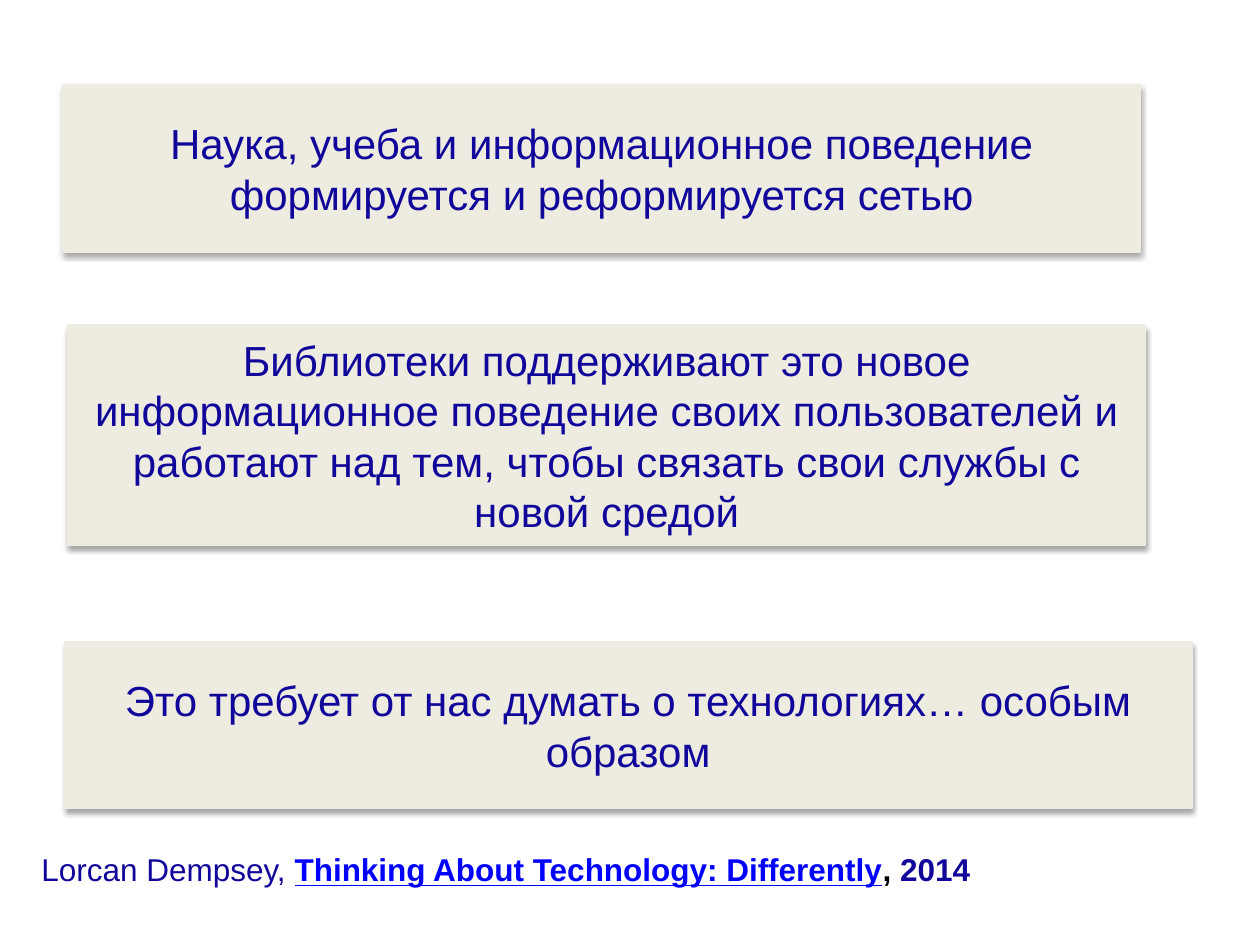
from dataclasses import dataclass

from lxml.etree import SubElement
from pptx import Presentation
from pptx.dml.color import RGBColor
from pptx.enum.shapes import MSO_SHAPE as Preset
from pptx.enum.text import MSO_ANCHOR as Anchor, MSO_AUTO_SIZE as AutoSize, PP_ALIGN as Align
from pptx.oxml.ns import qn
from pptx.util import Inches, Pt


@dataclass(frozen=True)
class Theme:
    font: str = "Arial"
    navy: str = "11069A"
    link: str = "0000FF"
    black: str = "000000"
    cream: str = "EEECE1"
    statement_size: int = 24
    source_size: int = 18


@dataclass(frozen=True)
class Area:
    """A place on the grid, in columns and rows."""
    column: float
    row: float
    columns: float
    rows: float


@dataclass(frozen=True)
class Statement:
    area: Area
    text: str


THEME = Theme()
COLUMNS, ROWS = 100, 75
WIDTH, HEIGHT = Inches(10), Inches(7.5)

STATEMENTS = (
    Statement(Area(5, 6.7, 85.5, 13.3),
              "Наука, учеба и информационное поведение формируется и реформируется сетью"),
    Statement(Area(5.4, 25.8, 85.5, 17.5),
              "Библиотеки поддерживают это новое информационное поведение своих "
              "пользователей и работают над тем, чтобы связать свои службы с новой средой"),
    Statement(Area(5.1, 50.9, 89.5, 13.3),
              "Это требует от нас думать о технологиях… особым образом"),
)
SOURCE_AREA = Area(2.3, 67, 82, 4)


def place(area: Area) -> tuple[int, int, int, int]:
    """Turn grid units into left, top, width and height."""
    column, row = WIDTH / COLUMNS, HEIGHT / ROWS
    return (round(area.column * column), round(area.row * row),
            round(area.columns * column), round(area.rows * row))


def add_text(paragraph, text: str, *, size: int, color: str = THEME.navy,
             bold: bool = False, underline: bool = False) -> None:
    run = paragraph.add_run()
    run.text = text
    font = run.font
    font.name, font.size = THEME.font, Pt(size)
    font.bold, font.underline = bold, underline
    font.color.rgb = RGBColor.from_string(color)


def add_shadow(shape) -> None:
    """Give the shape a soft shadow straight below it."""
    shape.shadow.inherit = False
    effects = shape.element.spPr.find(qn("a:effectLst"))
    shadow = SubElement(effects, qn("a:outerShdw"), blurRad=str(Pt(3.1)),
                        dist=str(Pt(1.8)), dir=str(90 * 60000), rotWithShape="0")
    color = SubElement(shadow, qn("a:srgbClr"), val=THEME.black)
    SubElement(color, qn("a:alpha"), val="35000")


def add_statement(slide, statement: Statement) -> None:
    shape = slide.shapes.add_shape(Preset.RECTANGLE, *place(statement.area))
    cream = RGBColor.from_string(THEME.cream)
    shape.fill.solid()
    shape.fill.fore_color.rgb = cream
    shape.line.color.rgb = cream
    shape.line.width = Pt(0.75)
    add_shadow(shape)
    frame = shape.text_frame
    frame.word_wrap = True
    frame.vertical_anchor = Anchor.MIDDLE
    paragraph = frame.paragraphs[0]
    paragraph.alignment = Align.CENTER
    add_text(paragraph, statement.text, size=THEME.statement_size)


def add_source(slide) -> None:
    frame = slide.shapes.add_textbox(*place(SOURCE_AREA)).text_frame
    frame.word_wrap = True
    frame.auto_size = AutoSize.SHAPE_TO_FIT_TEXT
    paragraph = frame.paragraphs[0]
    size = THEME.source_size
    add_text(paragraph, "Lorcan Dempsey, ", size=size)
    add_text(paragraph, "Thinking About Technology: Differently", size=size,
             color=THEME.link, bold=True, underline=True)
    add_text(paragraph, ", ", size=size, color=THEME.black, bold=True)
    add_text(paragraph, "2014", size=size, bold=True)


def main() -> None:
    presentation = Presentation()
    presentation.slide_width, presentation.slide_height = WIDTH, HEIGHT
    slide = presentation.slides.add_slide(presentation.slide_layouts[6])

    # Three statements, from top to bottom
    for statement in STATEMENTS:
        add_statement(slide, statement)

    # Source line
    add_source(slide)

    presentation.save("out.pptx")


if __name__ == "__main__":
    main()
